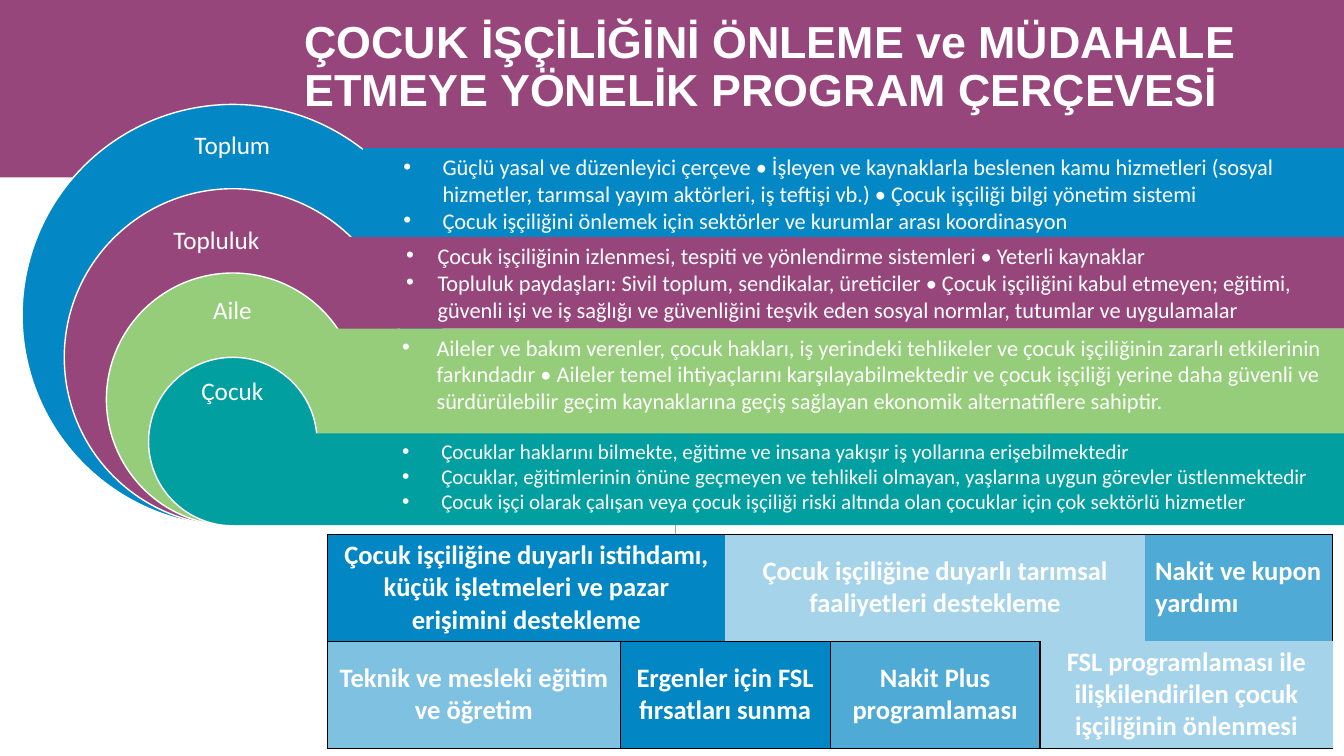
from lxml import etree
from pptx import Presentation
from pptx.dml.color import RGBColor
from pptx.enum.shapes import MSO_CONNECTOR, MSO_SHAPE
from pptx.enum.text import MSO_ANCHOR, MSO_AUTO_SIZE, PP_ALIGN
from pptx.oxml.ns import qn
from pptx.util import Pt

LEFT, CENTER = PP_ALIGN.LEFT, PP_ALIGN.CENTER
TOP, MIDDLE = MSO_ANCHOR.TOP, MSO_ANCHOR.MIDDLE
NO_FIT = MSO_AUTO_SIZE.NONE
RECTANGLE, OVAL = MSO_SHAPE.RECTANGLE, MSO_SHAPE.OVAL
STRAIGHT = MSO_CONNECTOR.STRAIGHT
COMPARISON_LAYOUT = 4  # a title and four bodies

COLORS = {
    "white": "FFFFFF", "black": "000000", "grey": "A5A5A5",
    "purple": "97467C", "society": "0388C5", "family": "95CD7A",
    "child": "029FA0", "blue": "0287C4", "mid_blue": "4FAAD6",
    "soft_blue": "7FC1E0", "pale_blue": "A5D3EA",
}

# Circles, outermost first: label, colour, label centre x and y
CIRCLES = [
    ("Toplum", "society", 166, 103),
    ("Topluluk", "purple", 154.5, 171),
    ("Aile", "family", 166, 221),
    ("Çocuk", "child", 166, 279),
]
CIRCLE_CENTER, CIRCLE_BOTTOM = 166.3, 375.6
CIRCLE_SIZE, CIRCLE_STEP = 301, 60.2

# Bands: colour, left, top, height, text indent, hanging, size, points
BANDS = [
    ("society", 259.2, 105.8, 85, 49.7, 28, 16, [
        "Güçlü yasal ve düzenleyici çerçeve • İşleyen ve kaynaklarla beslenen kamu hizmetleri "
        "(sosyal hizmetler, tarımsal yayım aktörleri, iş teftişi vb.) • Çocuk işçiliği bilgi "
        "yönetim sistemi",
        "Çocuk işçiliğini önlemek için sektörler ve kurumlar arası koordinasyon"]),
    ("purple", 247, 169.2, 65.5, 58.3, 22.5, 16, [
        "Çocuk işçiliğinin izlenmesi, tespiti ve yönlendirme sistemleri • Yeterli kaynaklar",
        "Topluluk paydaşları: Sivil toplum, sendikalar, üreticiler • Çocuk işçiliğini kabul "
        "etmeyen; eğitimi, güvenli işi ve iş sağlığı ve güvenliğini teşvik eden sosyal normlar, "
        "tutumlar ve uygulamalar"]),
    ("family", 234, 234.7, 85, 70.6, 24.5, 16, [
        "Aileler ve bakım verenler, çocuk hakları, iş yerindeki tehlikeler ve çocuk işçiliğinin "
        "zararlı etkilerinin farkındadır • Aileler temel ihtiyaçlarını karşılayabilmektedir ve "
        "çocuk işçiliği yerine daha güvenli ve sürdürülebilir geçim kaynaklarına geçiş sağlayan "
        "ekonomik alternatiflere sahiptir."]),
    ("child", 167, 309.6, 65.5, 141, 28, 15, [
        "Çocuklar haklarını bilmekte, eğitime ve insana yakışır iş yollarına erişebilmektedir",
        "Çocuklar, eğitimlerinin önüne geçmeyen ve tehlikeli olmayan, yaşlarına uygun görevler "
        "üstlenmektedir",
        "Çocuk işçi olarak çalışan veya çocuk işçiliği riski altında olan çocuklar için çok "
        "sektörlü hizmetler"]),
]

# Table cells: text, colour, first and last column, black sides, alignment
COLUMN_WIDTHS = [209, 75, 75, 150, 75, 134]
ROW_HEIGHT = 76.4
ACTIVITIES = [
    [("Çocuk işçiliğine duyarlı istihdamı, küçük işletmeleri ve pazar erişimini destekleme",
      "blue", 0, 1, "LTB", CENTER),
     ("Çocuk işçiliğine duyarlı tarımsal faaliyetleri destekleme", "pale_blue", 2, 4, "T", CENTER),
     ("Nakit ve kupon yardımı", "mid_blue", 5, 5, "TR", LEFT)],
    [("Teknik ve mesleki eğitim ve öğretim", "soft_blue", 0, 0, "LRTB", CENTER),
     ("Ergenler için FSL fırsatları sunma", "blue", 1, 2, "LRTB", CENTER),
     ("Nakit Plus programlaması", "mid_blue", 3, 3, "LRTB", CENTER),
     ("FSL programlaması ile ilişkilendirilen çocuk işçiliğinin önlenmesi",
      "pale_blue", 4, 5, "LRB", CENTER)],
]


def rgb(name):
    return RGBColor.from_string(COLORS[name])


def place(shape, left, top, width, height):
    shape.left, shape.top = Pt(left), Pt(top)
    shape.width, shape.height = Pt(width), Pt(height)


def bring_to_front(slide, shape):
    slide.shapes._spTree.append(shape._element)


def write_text(frame, *texts, size=18, font="Calibri", bold=False, align=LEFT,
               anchor=TOP, spacing=1.0, margins=(7.2, 3.6), bullet=None):
    """Fill a text frame; bullet is a pair of left indent and hanging indent."""
    frame.word_wrap = True
    frame.auto_size = NO_FIT
    frame.vertical_anchor = anchor
    frame.margin_left = frame.margin_right = Pt(margins[0])
    frame.margin_top = frame.margin_bottom = Pt(margins[1])
    for number, text in enumerate(texts):
        paragraph = frame.add_paragraph() if number else frame.paragraphs[0]
        paragraph.alignment = align
        paragraph.line_spacing = spacing
        paragraph.space_before = paragraph.space_after = Pt(0)
        run = paragraph.add_run()
        run.text = text
        run.font.size, run.font.name, run.font.bold = Pt(size), font, bold
        run.font.color.rgb = rgb("white")
        if bullet:
            add_bullet(paragraph, *bullet)


def add_bullet(paragraph, indent, hanging):
    props = paragraph._p.get_or_add_pPr()
    props.set("marL", str(Pt(indent)))
    props.set("indent", str(-Pt(hanging)))
    color = etree.SubElement(props, qn("a:buClr"))
    etree.SubElement(color, qn("a:srgbClr"), val=COLORS["white"])
    etree.SubElement(props, qn("a:buFont"), typeface="Arial")
    etree.SubElement(props, qn("a:buChar"), char="•")


def add_panel(slide, kind, color, box, outlined=False):
    panel = slide.shapes.add_shape(kind, *map(Pt, box))
    panel.shadow.inherit = False
    panel.fill.solid()
    panel.fill.fore_color.rgb = rgb(color)
    if outlined:
        panel.line.color.rgb = rgb("white")
        panel.line.width = Pt(1)
    else:
        panel.line.fill.background()


def add_divider(slide, x, top, bottom):
    divider = slide.shapes.add_connector(STRAIGHT, Pt(x), Pt(top), Pt(x), Pt(bottom))
    divider.line.color.rgb = rgb("grey")
    divider.line.width = Pt(0.75)
    etree.SubElement(divider._element.spPr, qn("a:effectLst"))


def add_label(slide, text, center_x, center_y):
    label = slide.shapes.add_textbox(Pt(center_x - 50), Pt(center_y - 14), Pt(100), Pt(28))
    write_text(label.text_frame, text, align=CENTER, anchor=MIDDLE)


def set_borders(cell, sides):
    props = cell._tc.get_or_add_tcPr()
    for position, side in enumerate("LRTB"):
        border = etree.Element(qn(f"a:ln{side}"), w=str(Pt(1)))
        if side in sides:
            fill = etree.SubElement(border, qn("a:solidFill"))
            etree.SubElement(fill, qn("a:srgbClr"), val=COLORS["black"])
        else:
            etree.SubElement(border, qn("a:noFill"))
        props.insert(position, border)


def add_activities(slide, left, top):
    table = slide.shapes.add_table(
        len(ACTIVITIES), len(COLUMN_WIDTHS), Pt(left), Pt(top),
        Pt(sum(COLUMN_WIDTHS)), Pt(ROW_HEIGHT * len(ACTIVITIES))).table
    table.first_row = table.horz_banding = False
    for column, width in zip(table.columns, COLUMN_WIDTHS):
        column.width = Pt(width)
    for row, activities in enumerate(ACTIVITIES):
        table.rows[row].height = Pt(ROW_HEIGHT)
        for text, color, first, last, sides, align in activities:
            activity = table.cell(row, first)
            if last > first:
                activity.merge(table.cell(row, last))
            for column in range(first, last + 1):
                part = table.cell(row, column)
                part.fill.solid()
                part.fill.fore_color.rgb = rgb(color)
                inner = ("L" if column > first else "") + ("R" if column < last else "")
                set_borders(part, set(sides) - set(inner))
            activity.vertical_anchor = MIDDLE
            write_text(activity.text_frame, text, size=19, bold=True, align=align, anchor=MIDDLE)


def main():
    deck = Presentation()
    deck.slide_width, deck.slide_height = Pt(960), Pt(540)
    slide = deck.slides.add_slide(deck.slide_layouts[COMPARISON_LAYOUT])
    title, *bodies = slide.placeholders

    # Header and divider
    add_panel(slide, RECTANGLE, "purple", (0, 0, 960, 126.7))
    add_divider(slide, 482.4, 250.6, 496.8)

    # Nested circles sharing their lowest point
    for level, (name, color, x, y) in enumerate(CIRCLES):
        size = CIRCLE_SIZE - level * CIRCLE_STEP
        add_panel(slide, OVAL, color,
                  (CIRCLE_CENTER - size / 2, CIRCLE_BOTTOM - size, size, size), outlined=True)
        add_label(slide, name, x, y)

    # Bands reaching the right edge
    for body, (color, left, top, height, indent, hanging, size, points) in zip(bodies, BANDS):
        place(body, left, top, 960 - left, height)
        body.fill.solid()
        body.fill.fore_color.rgb = rgb(color)
        write_text(body.text_frame, *points, size=size, bullet=(indent, hanging))
        bring_to_front(slide, body)

    # Activities
    add_activities(slide, 234, 381.6)

    # Title
    place(title, 217.4, 14.4, 742, 68.4)
    write_text(title.text_frame, "ÇOCUK İŞÇİLİĞİNİ ÖNLEME ve MÜDAHALE ETMEYE YÖNELİK PROGRAM ÇERÇEVESİ",
               size=32, font="Arial", bold=True, anchor=MIDDLE, spacing=0.9, margins=(0, 0))
    bring_to_front(slide, title)

    deck.save("out.pptx")


if __name__ == "__main__":
    main()
